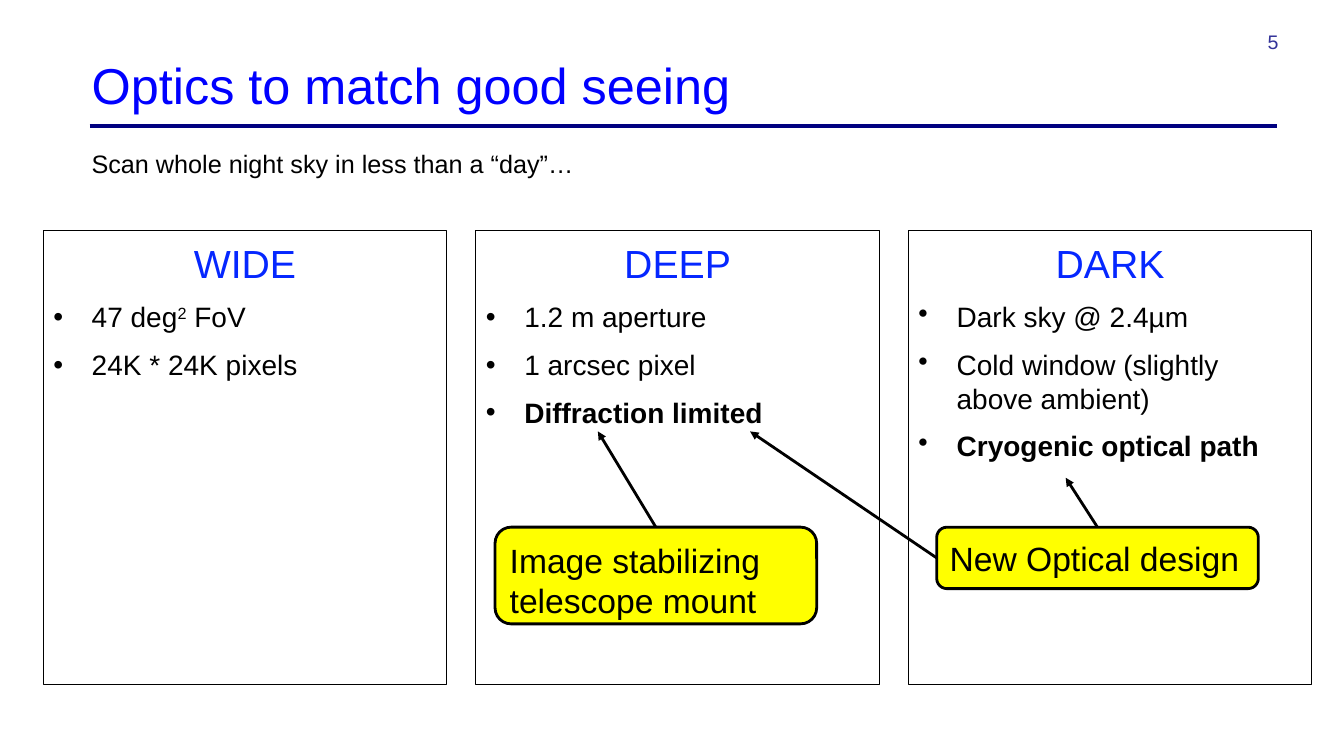
from dataclasses import dataclass

from lxml import etree
from pptx import Presentation, util as u
from pptx.dml.color import RGBColor
from pptx.enum import shapes, text
from pptx.oxml.ns import qn

TITLE = "Optics to match good seeing"
SUBTITLE = "Scan whole night sky in less than a “day”…"
PAGE_NUMBER = "5"
# A bullet is a list of runs: (text, format)
COLUMNS = [
    ("WIDE", [[("47 deg", {}), ("2", {"superscript": True}), (" FoV", {})],
              [("24K * 24K pixels", {})]]),
    ("DEEP", [[("1.2 m aperture", {})],
              [("1 arcsec pixel", {})],
              [("Diffraction limited", {"bold": True})]]),
    ("DARK", [[("Dark sky @ 2.4µm", {})],
              [("Cold window (slightly above ambient)", {})],
              [("Cryogenic optical path", {"bold": True})]]),
]
# Text, box, and arrows as (start share of box width, start share of height, tip)
CALLOUTS = [
    ("New Optical design", (9.29, 5.23, 3.19, 0.61),
     [(0, 0.5, (7.44, 4.28)), (0.5, 0, (10.57, 4.74))]),
    ("Image stabilizing telescope mount", (4.91, 5.23, 3.19, 0.96),
     [(0.5, 0, (5.93, 4.28))]),
]


@dataclass(frozen=True)
class Theme:
    font: str = "Arial"
    title: str = "0000FF"
    heading: str = "0527FF"
    rule: str = "000080"
    number: str = "333399"
    ink: str = "000000"
    callout: str = "FFFF00"
    title_size: int = 36
    heading_size: int = 28
    callout_size: int = 24
    bullet_size: int = 20
    subtitle_size: int = 18
    number_size: int = 14


THEME = Theme()
COLUMN_LEFT, COLUMN_TOP, COLUMN_PITCH = 0.43, 2.29, 4.29
COLUMN_WIDTH, COLUMN_HEIGHT = 4, 4.5
BULLET_INDENT = 0.38


def place(shape, left, top, width, height):
    shape.left, shape.top = u.Inches(left), u.Inches(top)
    shape.width, shape.height = u.Inches(width), u.Inches(height)


def outline(shape, color, width):
    shape.line.color.rgb = RGBColor.from_string(color)
    shape.line.width = u.Pt(width)


def write(paragraph, content, *, size, color=THEME.ink, bold=False,
          superscript=False, align=text.PP_ALIGN.LEFT):
    paragraph.alignment = align
    run = paragraph.add_run()
    run.text = content
    font = run.font
    font.name, font.size, font.bold = THEME.font, u.Pt(size), bold
    font.color.rgb = RGBColor.from_string(color)
    if superscript:
        run._r.get_or_add_rPr().set("baseline", "30000")


def set_bullet(paragraph, character=None):
    """Give the paragraph a hanging bullet, or none."""
    properties = paragraph._p.get_or_add_pPr()
    indent = u.Inches(BULLET_INDENT) if character else 0
    properties.set("marL", str(indent))
    properties.set("indent", str(-indent))
    if character:
        etree.SubElement(properties, qn("a:buChar")).set("char", character)
    else:
        etree.SubElement(properties, qn("a:buNone"))


def add_line(slide, start, end, color, width, arrow=False):
    line = slide.shapes.add_connector(
        shapes.MSO_CONNECTOR.STRAIGHT, *(u.Inches(v) for v in (*start, *end)))
    outline(line, color, width)
    if arrow:
        etree.SubElement(line.line._get_or_add_ln(), qn("a:tailEnd")).set("type", "triangle")
    etree.SubElement(line._element.spPr, qn("a:effectLst"))


def add_text_box(slide, box, content, wrap=True, **style):
    frame = slide.shapes.add_textbox(*(u.Inches(v) for v in box)).text_frame
    frame.word_wrap = wrap
    write(frame.paragraphs[0], content, **style)


def fill_column(shape, index, heading, bullets):
    place(shape, COLUMN_LEFT + index * COLUMN_PITCH, COLUMN_TOP, COLUMN_WIDTH, COLUMN_HEIGHT)
    outline(shape, THEME.ink, 0.75)
    frame = shape.text_frame
    frame.word_wrap, frame.auto_size = True, text.MSO_AUTO_SIZE.NONE
    frame.margin_top = u.Inches(0.08)
    first = frame.paragraphs[0]
    set_bullet(first)
    first.space_before = u.Pt(0)
    write(first, heading, size=THEME.heading_size, color=THEME.heading,
          align=text.PP_ALIGN.CENTER)
    for runs in bullets:
        paragraph = frame.add_paragraph()
        set_bullet(paragraph, "•")
        paragraph.space_before = u.Pt(THEME.bullet_size / 2)
        for content, style in runs:
            write(paragraph, content, size=THEME.bullet_size, **style)


def add_callout(slide, content, box, arrows):
    left, top, width, height = box
    for across, down, tip in arrows:
        start = (left + across * width, top + down * height)
        add_line(slide, start, tip, THEME.ink, 2, arrow=True)
    shape = slide.shapes.add_shape(
        shapes.MSO_SHAPE.ROUNDED_RECTANGLE, *(u.Inches(v) for v in box))
    shape.shadow.inherit = False
    shape.fill.solid()
    shape.fill.fore_color.rgb = RGBColor.from_string(THEME.callout)
    outline(shape, THEME.ink, 2)
    frame = shape.text_frame
    frame.word_wrap, frame.vertical_anchor = True, text.MSO_ANCHOR.TOP
    frame.margin_top = u.Inches(0.08)
    write(frame.paragraphs[0], content, size=THEME.callout_size)


def main():
    presentation = Presentation()
    presentation.slide_width, presentation.slide_height = u.Inches(13.33), u.Inches(7.5)
    two_content = presentation.slide_layouts[3]
    slide = presentation.slides.add_slide(two_content)

    add_line(slide, (0.89, 1.25), (12.67, 1.25), THEME.rule, 2.5)
    title = slide.shapes.title
    place(title, 0.81, 0.42, 12.01, 0.83)
    title.text_frame.vertical_anchor = text.MSO_ANCHOR.MIDDLE
    title.text_frame.auto_size = text.MSO_AUTO_SIZE.NONE
    write(title.text_frame.paragraphs[0], TITLE, size=THEME.title_size, color=THEME.title)
    add_text_box(slide, (0.81, 1.42, 5.11, 0.4), SUBTITLE, wrap=False,
                 size=THEME.subtitle_size)
    add_text_box(slide, (10, 0.25, 2.78, 0.42), PAGE_NUMBER, size=THEME.number_size,
                 color=THEME.number, align=text.PP_ALIGN.RIGHT)

    bodies = [slide.placeholders[1], slide.placeholders[2],
              slide.shapes.add_textbox(0, 0, 0, 0)]
    for index, (body, column) in enumerate(zip(bodies, COLUMNS)):
        fill_column(body, index, *column)
    for callout in CALLOUTS:
        add_callout(slide, *callout)
    presentation.save("out.pptx")


if __name__ == "__main__":
    main()
